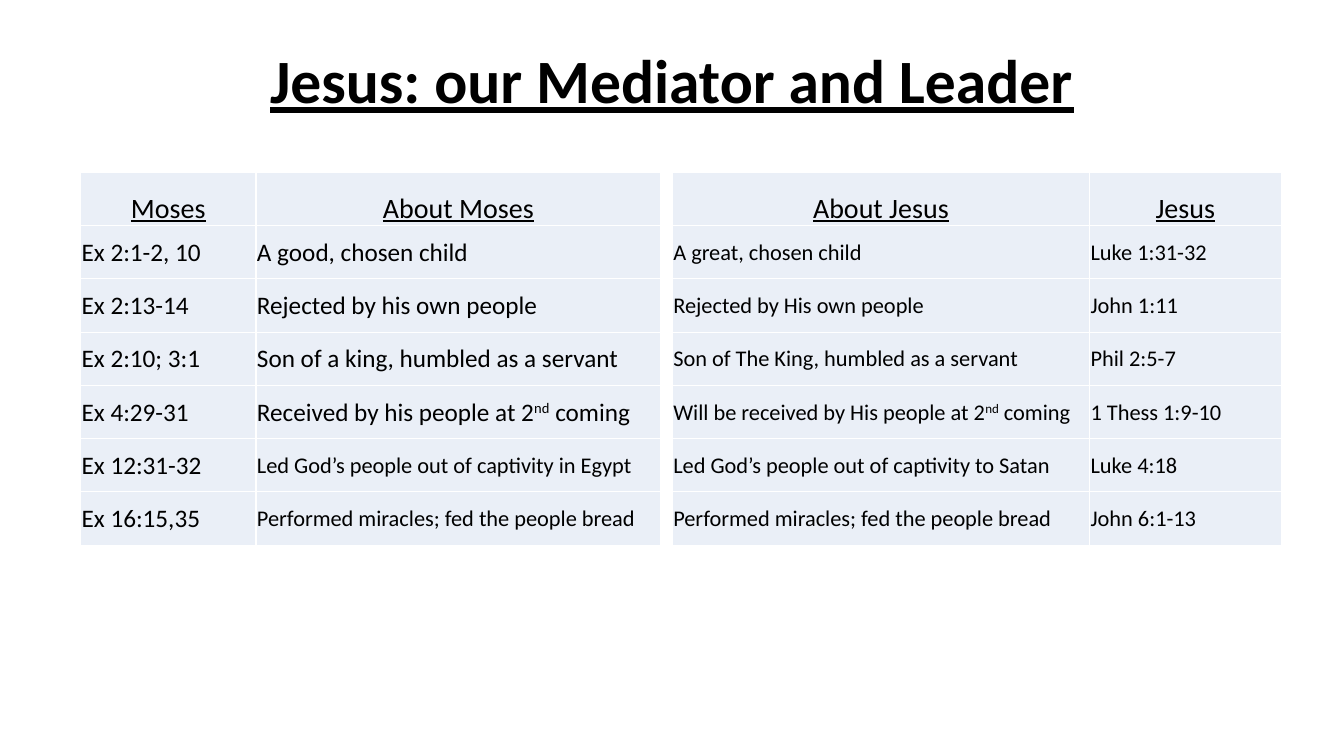
from dataclasses import dataclass

from lxml import etree
from pptx import Presentation
from pptx.dml.color import RGBColor
from pptx.enum.text import MSO_ANCHOR, PP_ALIGN
from pptx.oxml.ns import qn
from pptx.util import Pt

LEFT, CENTER = PP_ALIGN.LEFT, PP_ALIGN.CENTER
MIDDLE, BOTTOM = MSO_ANCHOR.MIDDLE, MSO_ANCHOR.BOTTOM


@dataclass(frozen=True)
class Theme:
    font: str = "Calibri"
    ink: str = "000000"
    cell_fill: str = "EAEFF7"
    rule: str = "FFFFFF"
    rule_width: float = 1
    title_size: float = 44
    header_size: float = 20
    body_size: float = 18
    small_size: float = 16


@dataclass(frozen=True)
class Entry:
    text: str
    size: float


@dataclass(frozen=True)
class Panel:
    left: float
    column_widths: tuple[float, float]
    headers: tuple[str, str]
    rows: list[tuple[Entry, Entry]]


THEME = Theme()
SLIDE_WIDTH, SLIDE_HEIGHT = 960, 540
PANEL_TOP, ROW_HEIGHT = 123.12, 38.06
CELL_INSET = 0.72


def body(text: str) -> Entry:
    return Entry(text, THEME.body_size)


def small(text: str) -> Entry:
    return Entry(text, THEME.small_size)


MOSES = Panel(57.6, (125.28, 289.2), ("Moses", "About Moses"), [
    (body("Ex 2:1-2, 10"), body("A good, chosen child")),
    (body("Ex 2:13-14"), body("Rejected by his own people")),
    (body("Ex 2:10; 3:1"), body("Son of a king, humbled as a servant")),
    (body("Ex 4:29-31"), body("Received by his people at 2^nd^ coming")),
    (body("Ex 12:31-32"), small("Led God’s people out of captivity in Egypt")),
    (body("Ex 16:15,35"), small("Performed miracles; fed the people bread")),
])
JESUS = Panel(480.24, (298.08, 136.8), ("About Jesus", "Jesus"), [
    (small("A great, chosen child"), small("Luke 1:31-32")),
    (small("Rejected by His own people"), small("John 1:11")),
    (small("Son of The King, humbled as a servant"), small("Phil 2:5-7")),
    (small("Will be received by His people at 2^nd^ coming"), small("1 Thess 1:9-10")),
    (small("Led God’s people out of captivity to Satan"), small("Luke 4:18")),
    (small("Performed miracles; fed the people bread"), small("John 6:1-13")),
])


def write_text(frame, text: str, *, size: float, align=LEFT, bold: bool = False,
               underline: bool = False, line_spacing: float = 1.0) -> None:
    """Fill a text frame; text between carets is set as superscript."""
    paragraph = frame.paragraphs[0]
    paragraph.alignment = align
    paragraph.line_spacing = line_spacing
    for index, part in enumerate(text.split("^")):
        run = paragraph.add_run()
        run.text = part
        run.font.name = THEME.font
        run.font.size = Pt(size)
        run.font.bold = bold
        run.font.underline = underline
        run.font.color.rgb = RGBColor.from_string(THEME.ink)
        if index % 2:
            run._r.get_or_add_rPr().set("baseline", "30000")


def add_cell_borders(cell) -> None:
    properties = cell._tc.get_or_add_tcPr()
    for side in ("lnL", "lnR", "lnT", "lnB"):
        line = etree.SubElement(properties, qn(f"a:{side}"), w=str(Pt(THEME.rule_width)))
        line_fill = etree.SubElement(line, qn("a:solidFill"))
        etree.SubElement(line_fill, qn("a:srgbClr"), val=THEME.rule)


def style_cell(cell, anchor) -> None:
    cell.vertical_anchor = anchor
    cell.margin_left = cell.margin_right = cell.margin_top = Pt(CELL_INSET)
    cell.margin_bottom = 0
    add_cell_borders(cell)
    cell.fill.solid()
    cell.fill.fore_color.rgb = RGBColor.from_string(THEME.cell_fill)


def add_title(slide, text: str) -> None:
    title = slide.shapes.add_textbox(Pt(66), Pt(22.32), Pt(828), Pt(74.88))
    title.text_frame.word_wrap = True
    title.text_frame.vertical_anchor = MIDDLE
    write_text(title.text_frame, text, size=THEME.title_size, align=CENTER,
               bold=True, underline=True, line_spacing=0.9)


def add_panel(slide, panel: Panel) -> None:
    row_count = len(panel.rows) + 1
    table = slide.shapes.add_table(
        row_count, len(panel.headers), Pt(panel.left), Pt(PANEL_TOP),
        Pt(sum(panel.column_widths)), Pt(row_count * ROW_HEIGHT)).table
    table.first_row = table.horz_banding = False
    for column, width in zip(table.columns, panel.column_widths):
        column.width = Pt(width)
    for row in table.rows:
        row.height = Pt(ROW_HEIGHT)
    for column_index, header in enumerate(panel.headers):
        cell = table.cell(0, column_index)
        style_cell(cell, BOTTOM)
        write_text(cell.text_frame, header, size=THEME.header_size,
                   align=CENTER, underline=True)
    for row_index, entries in enumerate(panel.rows, start=1):
        for column_index, entry in enumerate(entries):
            cell = table.cell(row_index, column_index)
            style_cell(cell, MIDDLE)
            write_text(cell.text_frame, entry.text, size=entry.size)


def main() -> None:
    presentation = Presentation()
    presentation.slide_width = Pt(SLIDE_WIDTH)
    presentation.slide_height = Pt(SLIDE_HEIGHT)
    slide = presentation.slides.add_slide(presentation.slide_layouts[6])
    add_title(slide, "Jesus: our Mediator and Leader")
    for panel in (JESUS, MOSES):
        add_panel(slide, panel)
    presentation.save("out.pptx")


if __name__ == "__main__":
    main()
